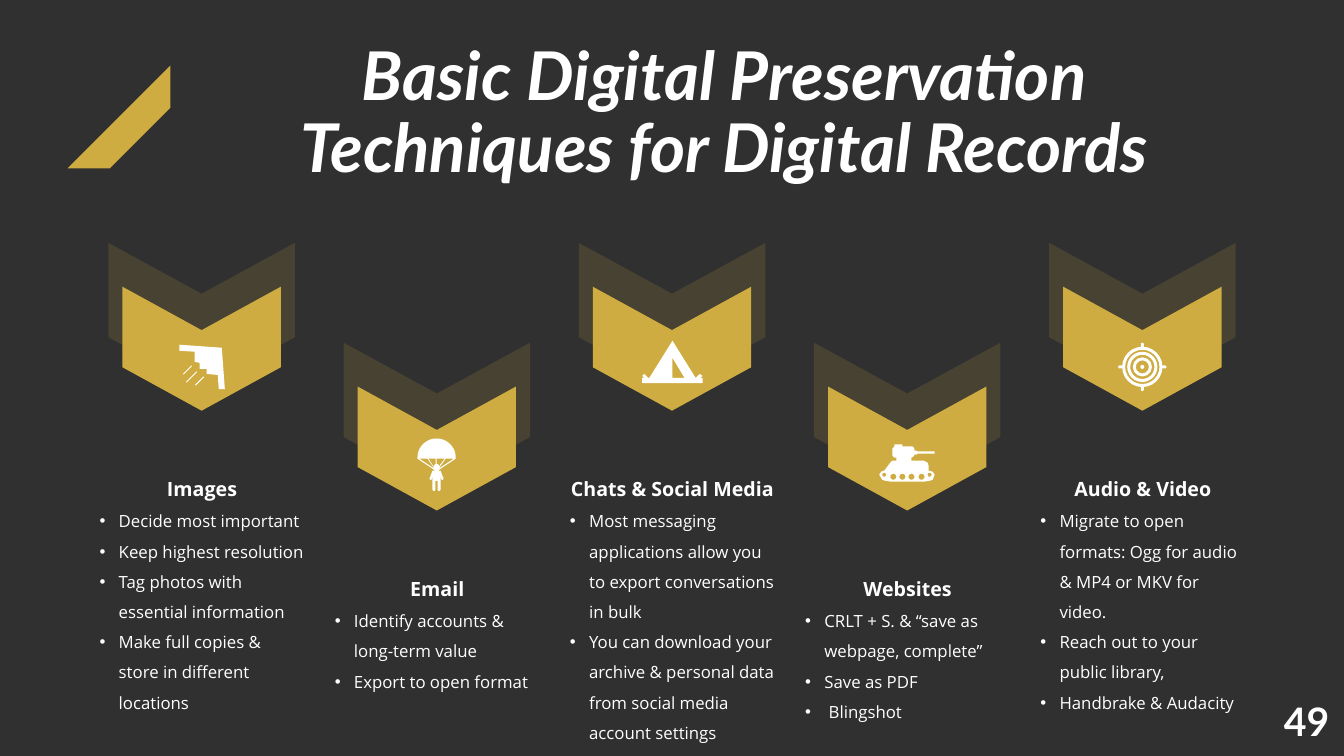
from math import cos, pi, sin

from lxml.etree import SubElement
from pptx import Presentation
from pptx.dml.color import RGBColor
from pptx.enum.shapes import MSO_SHAPE as Preset
from pptx.enum.text import MSO_ANCHOR as Anchor, MSO_AUTO_SIZE as AutoSize, PP_ALIGN as Align
from pptx.oxml.ns import qn
from pptx.util import Inches, Pt

CHARCOAL = RGBColor(0x30, 0x30, 0x30)
GOLD = RGBColor(0xCE, 0xAC, 0x41)
WHITE = RGBColor(0xFF, 0xFF, 0xFF)
WIDTH, HEIGHT = 13.33, 7.5

HEADING = {"name": "Open Sans", "size": Pt(14), "bold": True}
BULLET = {"name": "Open Sans", "size": Pt(12), "bold": False}
TITLE = {"name": "Lato", "size": Pt(48), "bold": True, "italic": True}
NUMBER = {"name": "Lato", "size": Pt(28), "bold": True}

# One entry per column: heading, then its bullets
TECHNIQUES = [
    ("Images", ["Decide most important", "Keep highest resolution",
                "Tag photos with essential information",
                "Make full copies & store in different locations"]),
    ("Email", ["Identify accounts & long-term value", "Export to open format"]),
    ("Chats & Social Media", [
        "Most messaging applications allow you to export conversations in bulk",
        "You can download your archive & personal data from social media account settings"]),
    ("Websites", ["CRLT + S. & “save as webpage, complete”", "Save as PDF", " Blingshot"]),
    ("Audio & Video", ["Migrate to open formats: Ogg for audio & MP4 or MKV for video.",
                       "Reach out to your public library,", "Handbrake & Audacity"]),
]

deck = Presentation()
deck.slide_width, deck.slide_height = Inches(WIDTH), Inches(HEIGHT)
page = deck.slides.add_slide(deck.slide_layouts[5])
page.background.fill.solid()
page.background.fill.fore_color.rgb = CHARCOAL


def add_figure(preset, center_x, center_y, width, height, color=WHITE, adjust=None, turn=0):
    """Filled preset shape placed by its centre, or a freeform when preset is a list of contours."""
    if isinstance(preset, list):
        contours = [[(Inches(x), Inches(y)) for x, y in contour] for contour in preset]
        builder = page.shapes.build_freeform(*contours[0][0])
        for contour in contours:
            if contour is not contours[0]:
                builder.move_to(*contour[0])
            builder.add_line_segments(contour[1:], close=True)
        shape = builder.convert_to_shape()
    else:
        shape = page.shapes.add_shape(preset, Inches(center_x - width / 2), Inches(center_y - height / 2),
                                      Inches(width), Inches(height))
        shape.rotation = turn
        if adjust is not None:
            shape.adjustments[0] = adjust
    shape.shadow.inherit = False
    shape.fill.solid()
    shape.fill.fore_color.rgb = color
    shape.line.fill.background()
    return shape


def write(para, text, style, align, spacing):
    para.alignment, para.line_spacing = align, spacing
    span = para.add_run()
    span.text = text
    span.font.color.rgb = WHITE
    for name, value in style.items():
        setattr(span.font, name, value)


# Corner stripe and page number
add_figure(Preset.DIAGONAL_STRIPE, 1.18, 1.16, 1.02, 1.02, GOLD, 0.59, 180)
box = page.shapes.add_textbox(Inches(12.44), Inches(6.87), Inches(1.04), Inches(0.57))
box.text_frame.word_wrap = True
box.text_frame.vertical_anchor = Anchor.MIDDLE
write(box.text_frame.paragraphs[0], "49", NUMBER, Align.CENTER, 1.0)

# Title
title = page.shapes.title
title.left, title.top, title.width, title.height = map(Inches, (1.93, 0.25, 10.51, 1.7))
frame = title.text_frame
frame.word_wrap = True
frame.vertical_anchor = Anchor.MIDDLE
frame.margin_top, frame.margin_bottom = Inches(0.16), Inches(0.08)
frame.auto_size = AutoSize.SHAPE_TO_FIT_TEXT
write(frame.paragraphs[0], "Basic Digital Preservation Techniques for Digital Records",
      TITLE, Align.CENTER, 0.9)

# Five columns, every second one lowered
for column, (heading, bullets) in enumerate(TECHNIQUES):
    center = WIDTH * (0.15 + 0.175 * column)
    drop = 0.99 * (column % 2)
    shade = add_figure(Preset.CHEVRON, center, 2.92 + 0.21 + drop, 1.44, 1.85, GOLD, 0.35, 90)
    color = shade.fill._xPr.find(qn("a:solidFill")).find(qn("a:srgbClr"))
    SubElement(color, qn("a:alpha")).set("val", "15000")
    add_figure(Preset.CHEVRON, center, 3.46 + drop, 1.23, 1.57, GOLD, 0.35, 90)

    box = page.shapes.add_textbox(Inches(center - 1.11), Inches(4.57 + drop), Inches(2.23),
                                  Inches(2.85 - 1.2 * (column % 2)))
    frame = box.text_frame
    frame.word_wrap = True
    write(frame.paragraphs[0], heading, HEADING, Align.CENTER, 1.5)
    for bullet in bullets:
        para = frame.add_paragraph()
        settings = para._p.get_or_add_pPr()
        settings.set("marL", str(Inches(0.19)))
        settings.set("indent", str(-Inches(0.19)))
        SubElement(settings, qn("a:buFont")).set("typeface", "Arial")
        SubElement(settings, qn("a:buChar")).set("char", "•")
        write(para, bullet, BULLET, Align.LEFT, 1.5)

# Images icon: stepped wing with three streaks
wing = [(2.2, 3.45), (1.78, 3.42), (1.78, 3.48), (1.93, 3.49), (1.93, 3.59), (1.98, 3.6), (1.98, 3.66),
        (2.05, 3.66), (2.05, 3.71), (2.16, 3.72), (2.17, 3.86), (2.23, 3.86)]
add_figure([wing], 0, 0, 0, 0)
for x, y, length in ((1.9, 3.74, 0.15), (1.98, 3.78, 0.12), (1.86, 3.67, 0.12)):
    add_figure(Preset.ROUNDED_RECTANGLE, x, y, length, 0.01, WHITE, 0.5, -45)

# Email icon: parachute and jumper
canopy = [(4.33 - 0.19 * cos(pi * step / 24), 4.54 - 0.19 * sin(pi * step / 24)) for step in range(25)]
gaps = [[(4.16, 4.55), (4.24, 4.55), (4.31, 4.65)], [(4.25, 4.55), (4.32, 4.55), (4.32, 4.66)],
        [(4.33, 4.55), (4.41, 4.55), (4.33, 4.66)], [(4.42, 4.55), (4.5, 4.55), (4.35, 4.65)]]
add_figure([canopy + [(4.52, 4.55), (4.34, 4.67), (4.32, 4.67), (4.14, 4.55)]] + gaps, 0, 0, 0, 0)
add_figure(Preset.OVAL, 4.33, 4.64, 0.06, 0.08)
half = [(0.04, 4.67), (0.07, 4.75), (0.06, 4.76), (0.05, 4.76), (0.04, 4.72), (0.04, 4.86),
        (0.03, 4.87), (0.02, 4.87), (0.01, 4.86), (0.01, 4.77)]
jumper = [(4.33 + x, y) for x, y in half] + [(4.33 - x, y) for x, y in reversed(half)]
add_figure([jumper], 0, 0, 0, 0)

# Chats icon: tent
tent = [(6.43, 3.75), (6.39, 3.71), (6.37, 3.73), (6.39, 3.75), (6.37, 3.75), (6.37, 3.8), (6.97, 3.8),
        (6.97, 3.75), (6.94, 3.75), (6.97, 3.73), (6.94, 3.71), (6.9, 3.75), (6.67, 3.38), (6.44, 3.75)]
add_figure([tent, [(6.67, 3.75), (6.67, 3.55), (6.79, 3.75)]], 0, 0, 0, 0)

# Websites icon: tank with round wheel holes
tank = [(8.77, 4.67), (8.83, 4.59), (8.85, 4.57), (8.89, 4.57), (8.89, 4.54), (8.87, 4.54), (8.85, 4.52),
        (8.85, 4.45), (8.87, 4.43), (8.87, 4.41), (8.95, 4.41), (8.95, 4.43), (9.05, 4.43), (9.07, 4.45),
        (9.07, 4.47), (9.09, 4.47), (9.1, 4.48), (9.27, 4.48), (9.27, 4.5), (9.1, 4.5), (9.09, 4.51),
        (9.07, 4.51), (9.06, 4.53), (9.04, 4.54), (9.04, 4.57), (9.16, 4.57), (9.2, 4.59), (9.21, 4.62),
        (9.21, 4.67), (9.25, 4.68), (9.27, 4.71), (9.25, 4.76), (9.22, 4.77), (9.16, 4.78), (8.84, 4.78),
        (8.78, 4.77), (8.75, 4.76), (8.72, 4.71), (8.74, 4.68)]
wheels = [[(x + radius * cos(pi * step / 8), y + radius * sin(pi * step / 8)) for step in range(16)]
          for x, y, radius in ((8.77, 4.71, 0.02), (8.86, 4.73, 0.03), (8.95, 4.73, 0.03),
                               (9.04, 4.73, 0.03), (9.14, 4.73, 0.03), (9.22, 4.71, 0.02))]
add_figure([tank] + wheels, 0, 0, 0, 0)

# Audio icon: target rings, four ticks and a dot
for size in (0.4, 0.3, 0.19):
    add_figure(Preset.DONUT, 11.33, 3.64, size, size, WHITE, 0.03 / size)
for quarter in range(4):
    angle = quarter * pi / 2
    add_figure(Preset.ROUNDED_RECTANGLE, 11.33 + 0.21 * cos(angle), 3.64 + 0.21 * sin(angle),
               0.06, 0.03, WHITE, 0.5, 90 * quarter)
add_figure(Preset.OVAL, 11.33, 3.64, 0.04, 0.04)

deck.save("out.pptx")
